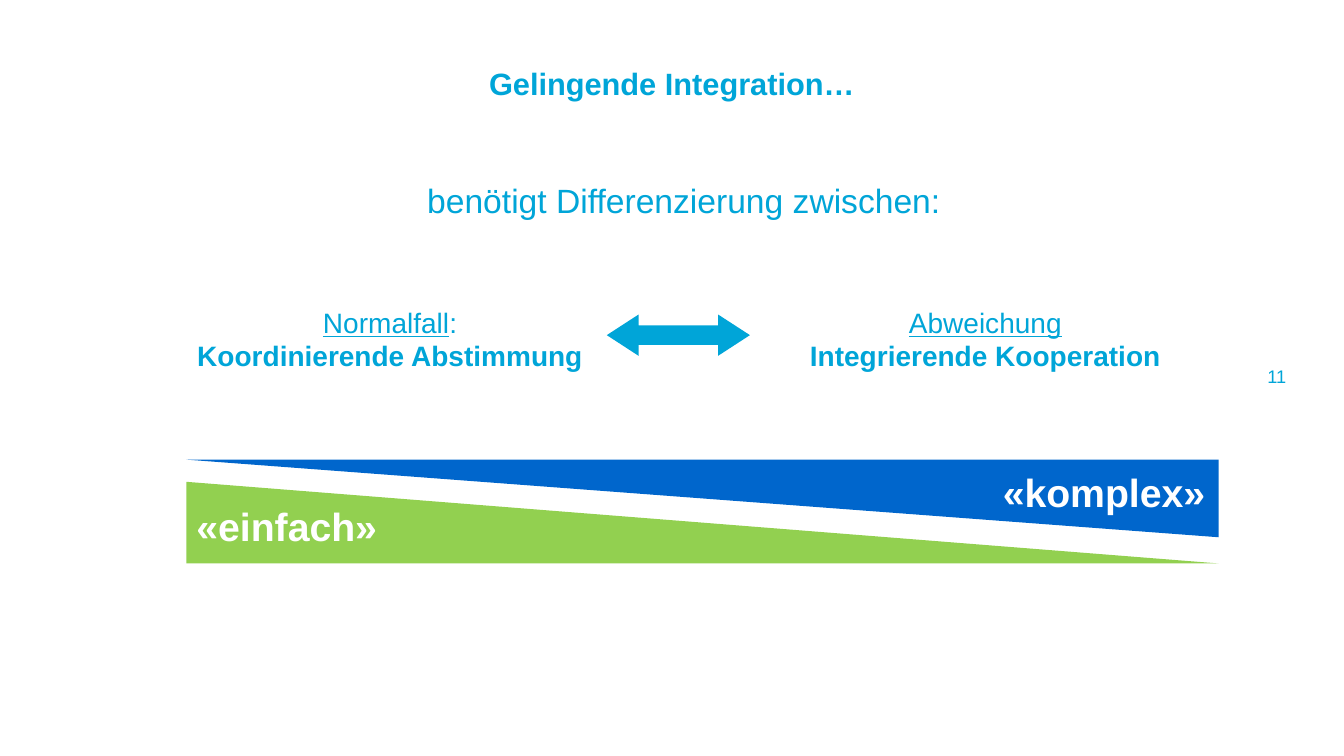
import pptx
import pptx.util
import pptx.dml.color
import pptx.enum.shapes
import pptx.enum.text

SHAPE = pptx.enum.shapes.MSO_SHAPE
ALIGN = pptx.enum.text.PP_ALIGN
ANCHOR = pptx.enum.text.MSO_ANCHOR


class IntegrationSlide:
    columns, rows = 80, 45
    font = "Arial"
    colors = {"cyan": "00A5D8", "green": "92D050", "blue": "0066CC", "white": "FFFFFF"}

    def __init__(self, prs):
        self.cell_w = prs.slide_width / self.columns
        self.cell_h = prs.slide_height / self.rows
        self.s = prs.slides.add_slide(prs.slide_layouts[5])

    def color(self, name):
        return pptx.dml.color.RGBColor.from_string(self.colors[name])

    def place(self, x, y, w, h):
        return (round(x * self.cell_w), round(y * self.cell_h),
                round(w * self.cell_w), round(h * self.cell_h))

    def style(self, p, size, color, bold, align):
        p.alignment = align
        p.font.name = self.font
        p.font.size = pptx.util.Pt(size)
        p.font.bold = bold
        p.font.color.rgb = self.color(color)

    def no_margins(self, tf):
        tf.margin_left = tf.margin_top = tf.margin_right = tf.margin_bottom = 0

    def title(self, cell, text, size):
        sp = self.s.shapes.title
        sp.left, sp.top, sp.width, sp.height = self.place(*cell)
        tf = sp.text_frame
        tf.text = text
        tf.vertical_anchor = ANCHOR.MIDDLE
        self.no_margins(tf)
        self.style(tf.paragraphs[0], size, "cyan", True, ALIGN.CENTER)

    def text(self, cell, text, size, color="cyan", bold=False, align=ALIGN.LEFT):
        tf = self.s.shapes.add_textbox(*self.place(*cell)).text_frame
        tf.word_wrap = False
        tf.text = text
        self.style(tf.paragraphs[0], size, color, bold, align)
        return tf

    def page_number(self, cell, number):
        tf = self.text(cell, number, 13, align=ALIGN.RIGHT)
        tf.word_wrap = True
        self.no_margins(tf)

    def case(self, cell, heading, suffix, form):
        tf = self.text(cell, heading, 20, align=ALIGN.CENTER)
        p = tf.paragraphs[0]
        p.runs[0].font.underline = True
        if suffix:
            p.add_run().text = suffix
        p = tf.add_paragraph()
        p.text = form
        self.style(p, 20, "cyan", True, ALIGN.CENTER)

    def shape(self, kind, cell, color, rotation=0, adjustments=()):
        sp = self.s.shapes.add_shape(kind, *self.place(*cell))
        sp.shadow.inherit = False
        sp.fill.solid()
        sp.fill.fore_color.rgb = self.color(color)
        sp.line.fill.background()
        sp.rotation = rotation
        for i, value in enumerate(adjustments):
            sp.adjustments[i] = value


def main():
    prs = pptx.Presentation()
    prs.slide_width = pptx.util.Inches(13.33)
    prs.slide_height = pptx.util.Inches(7.5)
    slide = IntegrationSlide(prs)

    slide.title((13.26, 0, 53.46, 9.96), "Gelingende Integration…", 22)
    slide.page_number((68.76, 21.72, 7.8, 1.44), "11")

    case_y, case_h = 17.88, 4.62
    slide.case((11.04, case_y, 24.36, case_h), "Normalfall", ":", "Koordinierende Abstimmung")
    slide.case((47.52, case_y, 22.26, case_h), "Abweichung", "", "Integrierende Kooperation")
    slide.shape(SHAPE.LEFT_RIGHT_ARROW, (36.12, 18.72, 8.52, 2.46), "cyan",
                adjustments=(0.47, 0.77))

    wedge_x, wedge_w = 11.1, 61.44
    slide.shape(SHAPE.RIGHT_TRIANGLE, (wedge_x, 28.68, wedge_w, 4.86), "green")
    slide.shape(SHAPE.RIGHT_TRIANGLE, (wedge_x, 27.36, wedge_w, 4.62), "blue", rotation=180)
    label_w = 13.44
    slide.text((wedge_x + wedge_w - label_w, 27.6, label_w, 3.42), "«komplex»", 28, "white", True)
    slide.text((wedge_x, 29.58, 12.12, 3.42), "«einfach»", 28, "white", True)

    slide.text((24.84, 10.44, 32.28, 3), "benötigt Differenzierung zwischen:", 24)
    prs.save("out.pptx")


if __name__ == "__main__":
    main()
